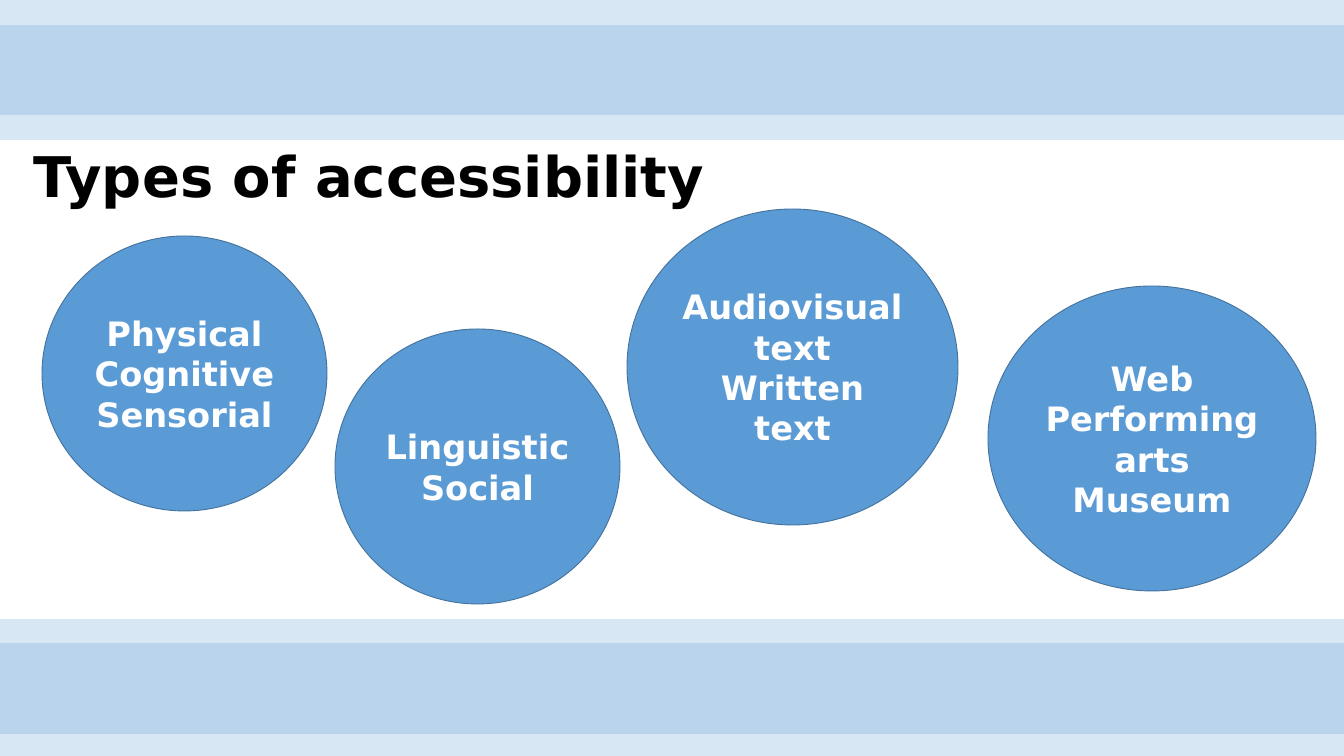
"""Build the "Types of accessibility" slide with python-pptx."""
from lxml import etree
from pptx import Presentation
from pptx.dml.color import RGBColor
from pptx.enum.shapes import MSO_SHAPE
from pptx.enum.text import MSO_ANCHOR, PP_ALIGN
from pptx.oxml.ns import qn
from pptx.util import Emu, Pt

RECTANGLE, OVAL = MSO_SHAPE.RECTANGLE, MSO_SHAPE.OVAL
MIDDLE = MSO_ANCHOR.MIDDLE
LEFT, CENTER = PP_ALIGN.LEFT, PP_ALIGN.CENTER

THEME = {
    "font": "DejaVu Sans",
    "blue": RGBColor(0x5B, 0x9B, 0xD5),
    "outline": RGBColor(0x43, 0x73, 0x9E),
    "title": RGBColor(0, 0, 0),
    "label": RGBColor(255, 255, 255),
    "title_size": Pt(60),
    "label_size": Pt(36),
    "band_alpha": 24,
}
PAGE_WIDTH, PAGE_HEIGHT, BAND_HEIGHT = 1344, 756, 115


def px(length):
    return Emu(round(length * 914400 / 67.2))


def write_text(box, lines, *, size, color, align, spacing=1.0):
    frame = box.text_frame
    frame.word_wrap = True
    frame.vertical_anchor = MIDDLE
    for index, line in enumerate(lines):
        para = frame.add_paragraph() if index else frame.paragraphs[0]
        para.alignment = align
        para.line_spacing = spacing
        span = para.add_run()
        span.text = line
        span.font.name = THEME["font"]
        span.font.size = size
        span.font.bold = True
        span.font.color.rgb = color


deck = Presentation()
deck.slide_width, deck.slide_height = px(PAGE_WIDTH), px(PAGE_HEIGHT)
page = deck.slides.add_slide(deck.slide_layouts[6])

for top in (643, 619, 0, 25):
    band = page.shapes.add_shape(RECTANGLE, 0, px(top), px(PAGE_WIDTH), px(BAND_HEIGHT))
    band.shadow.inherit = False
    band.line.fill.background()
    band.fill.solid()
    band.fill.fore_color.rgb = THEME["blue"]
    color = band.element.spPr.find(f"{qn('a:solidFill')}/{qn('a:srgbClr')}")
    etree.SubElement(color, qn("a:alpha"), val=str(THEME["band_alpha"] * 1000))

title = page.shapes.add_textbox(px(24), px(140), px(894), px(78))
title.text_frame.margin_left = title.text_frame.margin_right = px(10)
title.text_frame.margin_top = title.text_frame.margin_bottom = px(5)
write_text(title, ["Types of accessibility"], size=THEME["title_size"],
           color=THEME["title"], align=LEFT, spacing=0.9)

CIRCLES = [
    (42, 236, 285, 275, ["Physical", "Cognitive", "Sensorial"]),
    (335, 329, 285, 275, ["Linguistic", "Social"]),
    (627, 209, 331, 316, ["Audiovisual text", "Written text"]),
    (988, 286, 328, 305, ["Web", "Performing arts", "Museum"]),
]
for left, top, width, height, lines in CIRCLES:
    circle = page.shapes.add_shape(OVAL, px(left), px(top), px(width), px(height))
    circle.shadow.inherit = False
    circle.fill.solid()
    circle.fill.fore_color.rgb = THEME["blue"]
    circle.line.color.rgb = THEME["outline"]
    circle.line.width = Pt(1)
    write_text(circle, lines, size=THEME["label_size"], color=THEME["label"], align=CENTER)

deck.save("out.pptx")
